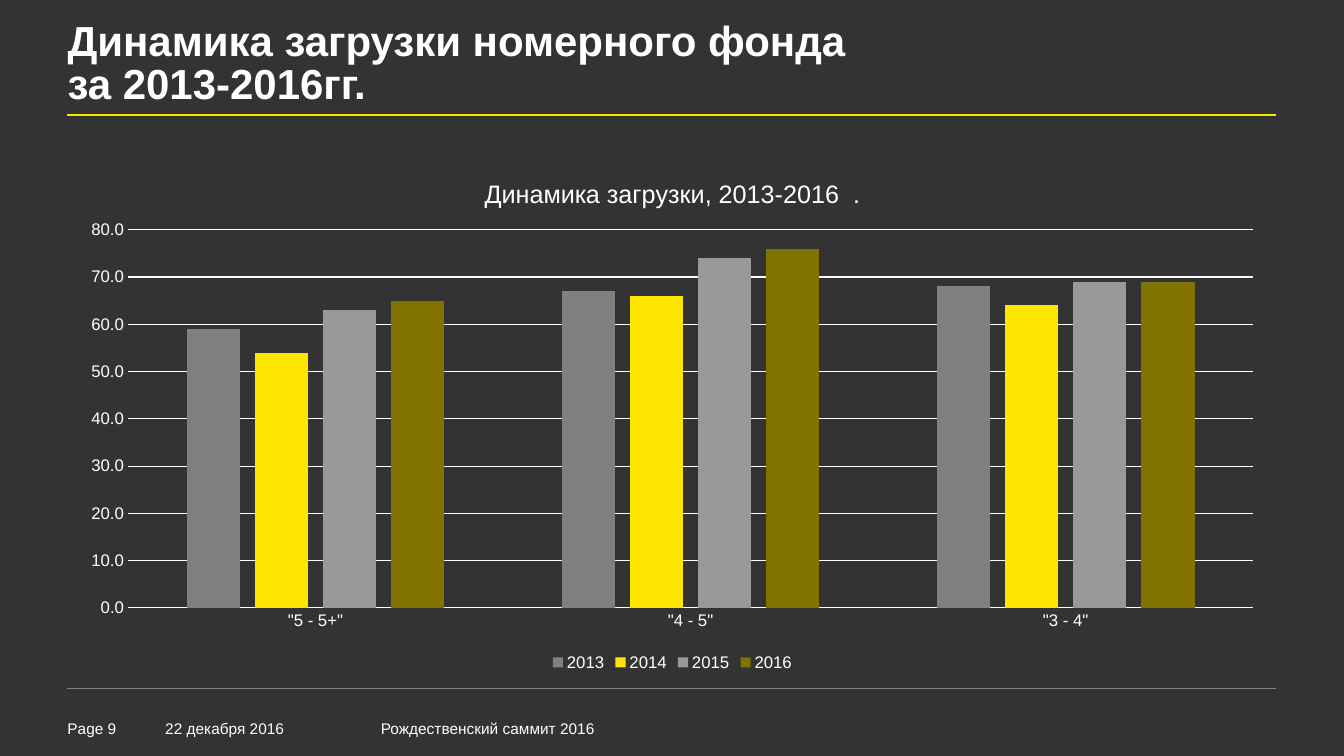
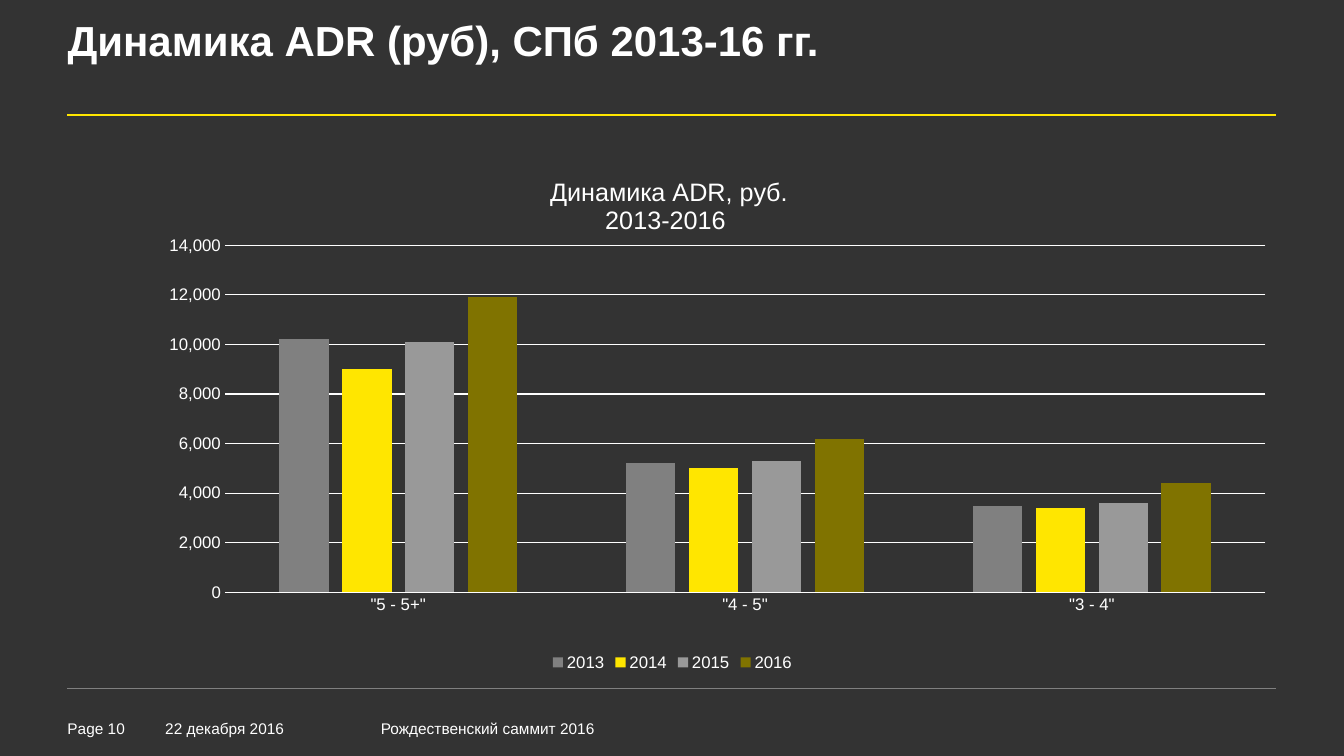
"""Build two hotel market slides with clustered column charts."""
from dataclasses import dataclass

from lxml import etree
from pptx import Presentation
from pptx import util as u
from pptx.chart.data import CategoryChartData
from pptx.dml.color import RGBColor
from pptx.enum import chart as ch, shapes, text
from pptx.oxml import parse_xml
from pptx.oxml.ns import nsdecls, qn

PX = 9144
FONT = "Arial"
BACK, WHITE, YELLOW, GREY = "333333", "FFFFFF", "FFE600", "808080"
SERIES_COLORS = (GREY, YELLOW, "999999", "807300")
YEARS = ("2013", "2014", "2015", "2016")
CATEGORIES = ('"5 - 5+"', '"4 - 5"', '"3 - 4"')
LEFT, WIDTH = 67, 1200


@dataclass(frozen=True)
class Rule:
    y: int
    color: str
    weight: float


@dataclass(frozen=True)
class FooterText:
    x: int
    width: int
    label: str
    wrap: bool = True


@dataclass(frozen=True)
class ChartSlide:
    page: int
    title: str
    chart_title: str
    number_format: str
    maximum: int
    step: int
    plot: tuple[float, float, float, float]
    values: tuple[tuple[int, ...], ...]


RULES = (Rule(114, YELLOW, 1.5), Rule(683, GREY, 0.25))
FOOTERS = (
    FooterText(LEFT, 97, "Page {page}"),
    FooterText(164, 150, "22 декабря 2016", False),
    FooterText(378, 501, "Рождественский саммит 2016"),
)
SLIDES = (
    ChartSlide(
        9, "Динамика загрузки номерного фонда \vза 2013-2016гг.",
        "Динамика загрузки, 2013-2016  .", r"#,##0.0;\-#,##0.0", 80, 10,
        (0.05, 0.14, 0.93, 0.73),
        ((59, 67, 68), (54, 66, 64), (63, 74, 69), (65, 76, 69)),
    ),
    ChartSlide(
        10, "Динамика ADR (руб), СПб 2013-16 гг.",
        "Динамика ADR, руб. \n2013-2016  ", r"#,##0;\-#,##0", 14000, 2000,
        (0.13, 0.17, 0.86, 0.67),
        ((10200, 5200, 3500), (9000, 5000, 3400),
         (10100, 5300, 3600), (11900, 6200, 4400)),
    ),
)


def px(*lengths: int) -> list[u.Emu]:
    """Turn pixel lengths into EMU."""
    return [u.Emu(n * PX) for n in lengths]


def rgb(value: str) -> RGBColor:
    """Turn a hex string into a colour."""
    return RGBColor.from_string(value)


def style_font(font, size: float, bold: bool = False) -> None:
    """Apply the shared typeface and colour to a font."""
    font.name, font.size, font.bold = FONT, u.Pt(size), bold
    font.color.rgb = rgb(WHITE)


def style_text(tf, size: float, bold: bool = False) -> None:
    """Format every run of a text frame."""
    for p in tf.paragraphs:
        for r in p.runs:
            style_font(r.font, size, bold)


def style_line(line, color: str, weight: float) -> None:
    """Set the colour and weight of a line."""
    line.color.rgb, line.width = rgb(color), u.Pt(weight)


def reset_frame(tf, wrap: bool = True) -> None:
    """Remove the insets and anchor the text at the top."""
    tf.margin_left = tf.margin_top = tf.margin_right = tf.margin_bottom = 0
    tf.vertical_anchor = text.MSO_ANCHOR.TOP
    tf.auto_size = text.MSO_AUTO_SIZE.NONE
    tf.word_wrap = wrap


def set_title(s, label: str) -> None:
    """Place and format the title placeholder."""
    sp = s.shapes.title
    sp.left, sp.top, sp.width, sp.height = px(LEFT, 22, 1201, 94)
    tf = sp.text_frame
    tf.text = label
    reset_frame(tf)
    p = tf.paragraphs[0]
    p.alignment, p.line_spacing = text.PP_ALIGN.LEFT, 0.85
    style_text(tf, 30, True)


def add_rule(s, rule: Rule) -> None:
    """Draw a horizontal rule across the content width."""
    sp = s.shapes.add_connector(
        shapes.MSO_CONNECTOR.STRAIGHT,
        *px(LEFT, rule.y, LEFT + WIDTH, rule.y))
    style_line(sp.line, rule.color, rule.weight)
    etree.SubElement(sp.element.spPr, qn("a:effectLst"))


def add_footer(s, footer: FooterText, page: int) -> None:
    """Add one footer text."""
    sp = s.shapes.add_textbox(*px(footer.x, 713, footer.width, 22))
    tf = sp.text_frame
    tf.text = footer.label.format(page=page)
    reset_frame(tf, footer.wrap)
    style_text(tf, 11)


def set_plot_layout(chart, plot: tuple[float, float, float, float]) -> None:
    """Fix the inner plot area as fractions of the chart."""
    area = chart.element.find(".//" + qn("c:plotArea"))
    for old in area.findall(qn("c:layout")):
        area.remove(old)
    sizes = "".join(f'<c:{k} val="{v}"/>' for k, v in zip("xywh", plot))
    area.insert(0, parse_xml(
        f'<c:layout {nsdecls("c")}><c:manualLayout>'
        '<c:layoutTarget val="inner"/><c:xMode val="edge"/>'
        f'<c:yMode val="edge"/>{sizes}</c:manualLayout></c:layout>'))


def style_axes(chart, content: ChartSlide) -> None:
    """Format the category and value axes."""
    for axis in (chart.category_axis, chart.value_axis):
        axis.major_tick_mark = axis.minor_tick_mark = ch.XL_TICK_MARK.NONE
        style_font(axis.tick_labels.font, 12)
    style_line(chart.category_axis.format.line, WHITE, 0.75)
    axis = chart.value_axis
    axis.format.line.fill.background()
    axis.minimum_scale, axis.maximum_scale = 0, content.maximum
    axis.major_unit = content.step
    axis.has_major_gridlines = True
    style_line(axis.major_gridlines.format.line, WHITE, 0.75)
    axis.tick_labels.number_format = content.number_format
    axis.tick_labels.number_format_is_linked = False


def add_column_chart(s, content: ChartSlide) -> None:
    """Add the clustered column chart."""
    data = CategoryChartData()
    data.categories = CATEGORIES
    for year, values in zip(YEARS, content.values):
        data.add_series(year, values)
    chart = s.shapes.add_chart(
        ch.XL_CHART_TYPE.COLUMN_CLUSTERED, *px(LEFT, 156, 1201, 514), data).chart
    style_font(chart.font, 10)
    chart.has_title = True
    tf = chart.chart_title.text_frame
    tf.text = content.chart_title
    style_text(tf, 18)
    chart.chart_title.include_in_layout = False
    chart.has_legend = True
    chart.legend.position = ch.XL_LEGEND_POSITION.BOTTOM
    chart.legend.include_in_layout = False
    style_font(chart.legend.font, 12)
    plot = chart.plots[0]
    plot.gap_width, plot.overlap, plot.vary_by_categories = 219, -27, False
    for series, color in zip(plot.series, SERIES_COLORS):
        series.format.fill.solid()
        series.format.fill.fore_color.rgb = rgb(color)
    style_axes(chart, content)
    set_plot_layout(chart, content.plot)


def build_slide(prs, content: ChartSlide) -> None:
    """Build one slide from its content."""
    s = prs.slides.add_slide(prs.slide_layouts[5])
    set_title(s, content.title)
    for rule in RULES:
        add_rule(s, rule)
    add_column_chart(s, content)
    for footer in FOOTERS:
        add_footer(s, footer, content.page)


def main() -> None:
    """Build and save the presentation."""
    prs = Presentation()
    prs.slide_width, prs.slide_height = px(1334, 750)
    fill = prs.slide_master.background.fill
    fill.solid()
    fill.fore_color.rgb = rgb(BACK)
    for content in SLIDES:
        build_slide(prs, content)
    prs.save("out.pptx")


if __name__ == "__main__":
    main()
